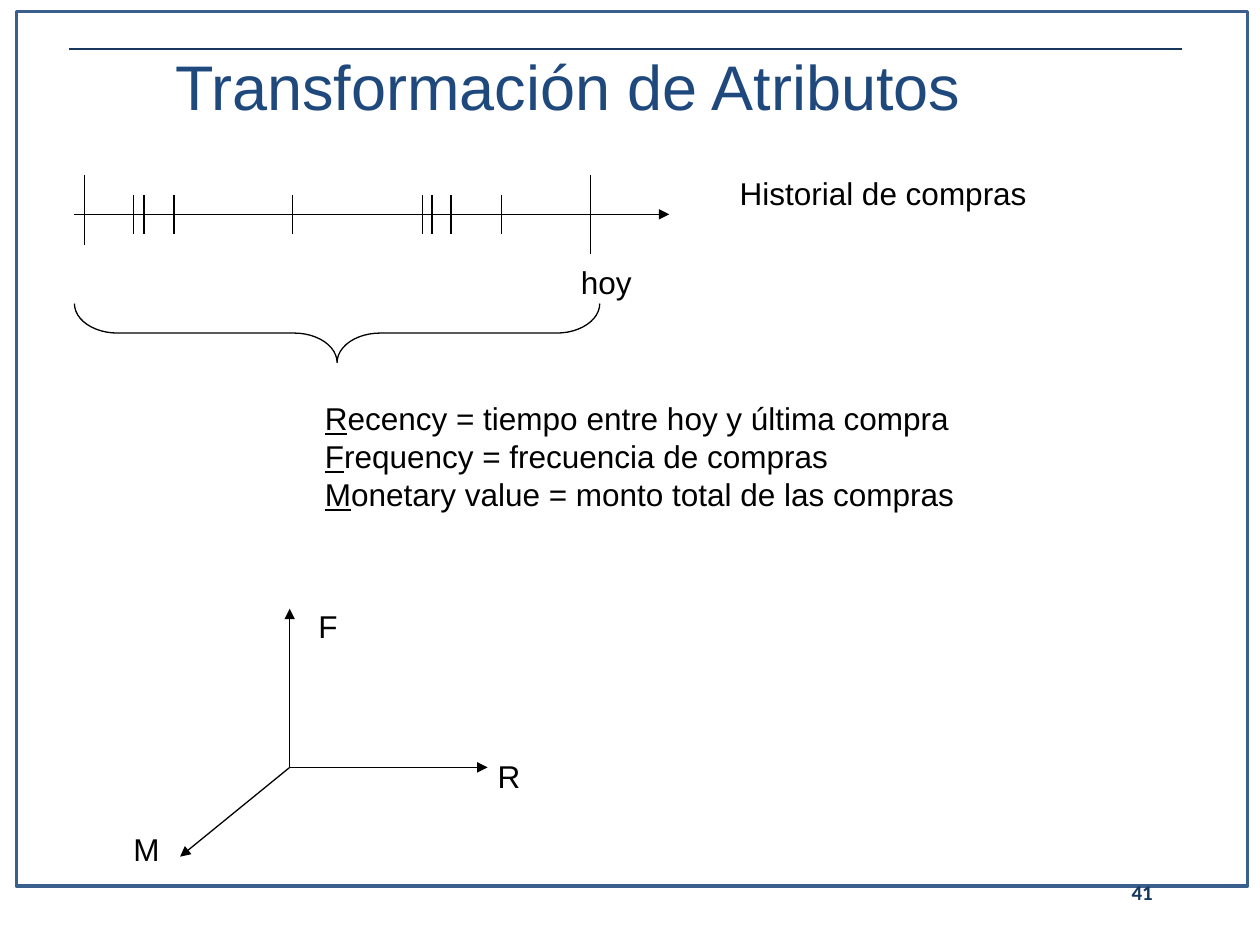
"""Build the slide on turning a purchase history into RFM attributes."""
from dataclasses import dataclass

from lxml.etree import SubElement
from pptx import Presentation
from pptx.dml.color import RGBColor
from pptx.enum.shapes import MSO_CONNECTOR, MSO_SHAPE
from pptx.enum.text import MSO_ANCHOR, PP_ALIGN
from pptx.oxml.ns import qn
from pptx.shapes.autoshape import Shape
from pptx.slide import Slide
from pptx.util import Cm, Pt


@dataclass(frozen=True)
class Theme:
    black: RGBColor = RGBColor(0x00, 0x00, 0x00)
    navy: RGBColor = RGBColor(0x17, 0x37, 0x5E)
    frame: RGBColor = RGBColor(0x3A, 0x5F, 0x8C)
    title: RGBColor = RGBColor(0x1F, 0x49, 0x7D)
    body_font: str = "Arial"
    number_font: str = "Calibri"
    title_size: int = 36
    body_size: int = 18
    number_size: int = 12
    thin: float = 0.75
    thick: float = 2


THEME = Theme()


@dataclass(frozen=True)
class Box:
    left: float
    top: float
    width: float
    height: float = 1.27

    def lengths(self) -> tuple[Cm, Cm, Cm, Cm]:
        return Cm(self.left), Cm(self.top), Cm(self.width), Cm(self.height)


@dataclass(frozen=True)
class Line:
    start: tuple[float, float]
    end: tuple[float, float]
    arrow: bool = False
    color: RGBColor = THEME.black


@dataclass(frozen=True)
class Label:
    text: str
    box: Box
    size: int = THEME.body_size
    font: str = THEME.body_font
    color: RGBColor = THEME.black
    bold: bool = False
    align: PP_ALIGN = PP_ALIGN.LEFT
    anchor: MSO_ANCHOR = MSO_ANCHOR.TOP
    margin_right: float = 0.25
    underline_initials: bool = False


TIMELINE_Y = 4.32
TICK_TOP, TICK_BOTTOM = 3.94, 4.72
PURCHASES = (2.69, 2.9, 3.51, 5.89, 8.51, 8.71, 9.09, 10.11)
ORIGIN = (5.84, 15.47)

LINES = (
    Line((1.4, 0.99), (23.83, 0.99), color=THEME.navy),
    Line(ORIGIN, (9.83, ORIGIN[1]), arrow=True),
    Line(ORIGIN, (ORIGIN[0], 12.27), arrow=True),
    Line(ORIGIN, (3.63, 17.27), arrow=True),
    Line((1.5, TIMELINE_Y), (13.49, TIMELINE_Y), arrow=True),
    Line((1.7, 3.53), (1.7, 4.93)),
    *(Line((x, TICK_TOP), (x, TICK_BOTTOM)) for x in PURCHASES),
    Line((11.91, 3.53), (11.91, 5.13)),
)

DEFINITIONS = "\n".join((
    "Recency = tiempo entre hoy y última compra",
    "Frequency = frecuencia de compras",
    "Monetary value = monto total de las compras",
))

LABELS = (
    Label("41", Box(18.21, 17.35, 5.28), THEME.number_size, THEME.number_font, THEME.navy,
          bold=True, align=PP_ALIGN.RIGHT, anchor=MSO_ANCHOR.MIDDLE),
    Label(DEFINITIONS, Box(6.3, 7.92, 17.68, 3.3), underline_initials=True),
    Label("R", Box(9.78, 15.14, 1.12)),
    Label("F", Box(6.17, 12.12, 1.02)),
    Label("M", Box(2.44, 16.61, 1.22)),
    Label("hoy", Box(11.46, 5.18, 1.88)),
    Label("Historial de compras", Box(14.66, 3.38, 8.23)),
    Label("Transformación de Atributos", Box(2.31, 0.13, 19, 3.18), THEME.title_size,
          color=THEME.title, align=PP_ALIGN.CENTER, anchor=MSO_ANCHOR.MIDDLE, margin_right=0.97),
)


def add_outline(slide: Slide, kind: MSO_SHAPE, box: Box, color: RGBColor, width: float) -> Shape:
    shape = slide.shapes.add_shape(kind, *box.lengths())
    shape.shadow.inherit = False
    shape.fill.background()
    shape.line.color.rgb = color
    shape.line.width = Pt(width)
    return shape


def add_line(slide: Slide, line: Line) -> None:
    points = (Cm(value) for value in (*line.start, *line.end))
    connector = slide.shapes.add_connector(MSO_CONNECTOR.STRAIGHT, *points)
    connector.line.color.rgb = line.color
    connector.line.width = Pt(THEME.thin)
    if line.arrow:
        SubElement(connector.line._get_or_add_ln(), qn("a:tailEnd"), type="triangle")
    SubElement(connector._element.spPr, qn("a:effectLst"))


def add_label(slide: Slide, label: Label) -> None:
    text_frame = slide.shapes.add_textbox(*label.box.lengths()).text_frame
    text_frame.word_wrap = True
    text_frame.vertical_anchor = label.anchor
    text_frame.margin_right = Cm(label.margin_right)
    text_frame.text = label.text
    for paragraph in text_frame.paragraphs:
        paragraph.alignment = label.align
        if label.underline_initials:
            initial, rest = paragraph.text[0], paragraph.text[1:]
            paragraph.runs[0].text = initial
            paragraph.runs[0].font.underline = True
            paragraph.add_run().text = rest
        for run in paragraph.runs:
            run.font.size = Pt(label.size)
            run.font.name = label.font
            run.font.bold = label.bold
            run.font.color.rgb = label.color


def main() -> None:
    presentation = Presentation()
    presentation.slide_width, presentation.slide_height = Cm(25.4), Cm(19.05)
    slide = presentation.slides.add_slide(presentation.slide_layouts[6])

    add_outline(slide, MSO_SHAPE.RECTANGLE, Box(0.33, 0.23, 24.82, 17.63), THEME.frame, THEME.thick)
    for line in LINES:
        add_line(slide, line)
    brace = add_outline(slide, MSO_SHAPE.RIGHT_BRACE, Box(6.2, 1.42, 1.19, 10.59),
                        THEME.black, THEME.thin)
    brace.rotation = 90
    brace.adjustments[0] = 0.73
    for label in LABELS:
        add_label(slide, label)

    presentation.save("out.pptx")


if __name__ == "__main__":
    main()
